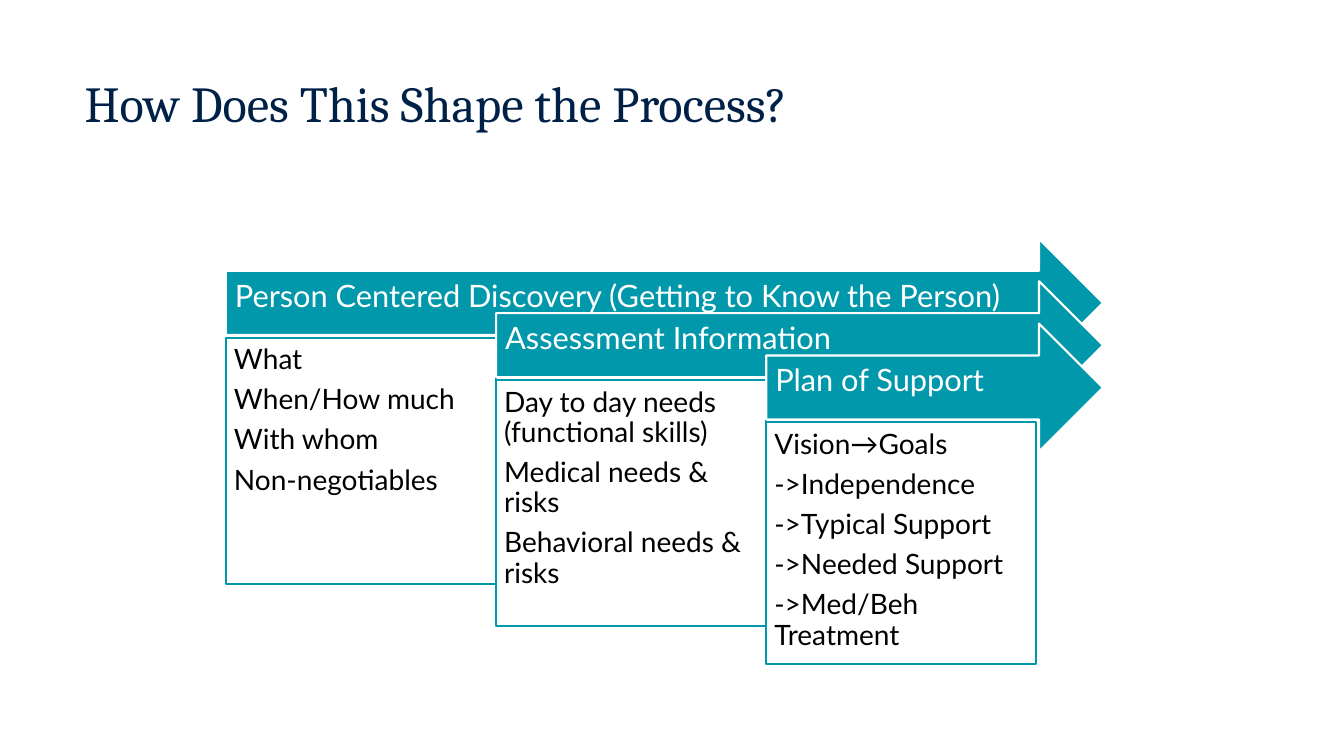
import pptx
import pptx.util
import pptx.dml.color
import pptx.enum.shapes
import pptx.enum.text

Inches = pptx.util.Inches
Pt = pptx.util.Pt
RGBColor = pptx.dml.color.RGBColor
SHAPE = pptx.enum.shapes.MSO_SHAPE
ANCHOR = pptx.enum.text.MSO_ANCHOR
ALIGN = pptx.enum.text.PP_ALIGN

NAVY = RGBColor(0x00, 0x21, 0x47)
TEAL = RGBColor(0x00, 0x98, 0xAA)
WHITE = RGBColor(0xFF, 0xFF, 0xFF)
BLACK = RGBColor(0x00, 0x00, 0x00)

LEFT, TOP = 2.24, 2.37
STEP_X, STEP_Y = 2.68, 0.42
ARROW_TIP, ARROW_HEIGHT = 10.94, 1.27
PANEL_DROP = 0.98

STAGES = [
    ("Person Centered Discovery (Getting to Know the Person)", 2.44,
     ["What", "When/How much", "With whom", "Non-negotiables"]),
    ("Assessment Information", 2.44,
     ["Day to day needs (functional skills)", "Medical needs & risks",
      "Behavioral needs & risks"]),
    ("Plan of Support", 2.4,
     ["Vision→Goals", "->Independence", "->Typical Support",
      "->Needed Support", "->Med/Beh Treatment"]),
]

ARROW_STYLE = {"fill": TEAL, "line": WHITE, "text": WHITE, "size": 22,
               "anchor": ANCHOR.MIDDLE, "insets": (0.09, 0.09, 0.28, 0.2)}
PANEL_STYLE = {"fill": WHITE, "line": TEAL, "text": BLACK, "size": 20,
               "anchor": ANCHOR.TOP, "insets": (0.08, 0.08, 0.08, 0.08)}


def set_frame(frame, anchor, insets):
    """Wrap the text and set its anchor and its left, top, right, bottom insets."""
    frame.word_wrap = True
    frame.vertical_anchor = anchor
    for side, inset in zip(("left", "top", "right", "bottom"), insets):
        setattr(frame, f"margin_{side}", Inches(inset))


def add_block(kind, box, lines, style):
    block = slide.shapes.add_shape(kind, *map(Inches, box))
    block.shadow.inherit = False
    block.fill.solid()
    block.fill.fore_color.rgb = style["fill"]
    block.line.color.rgb = style["line"]
    block.line.width = Pt(1.5)
    set_frame(block.text_frame, style["anchor"], style["insets"])
    block.text_frame.text = "\n".join(lines)
    paragraph_format = {"alignment": ALIGN.LEFT, "line_spacing": 0.9,
                        "space_after": Pt(0.35 * style["size"])}
    font_format = {"name": "Lato", "size": Pt(style["size"])}
    for paragraph in block.text_frame.paragraphs:
        for name, value in paragraph_format.items():
            setattr(paragraph, name, value)
        for name, value in font_format.items():
            setattr(paragraph.font, name, value)
        paragraph.font.color.rgb = style["text"]


deck = pptx.Presentation()
deck.slide_width = Inches(13.33)
deck.slide_height = Inches(7.5)
slide = deck.slides.add_slide(deck.slide_layouts[5])

title = slide.shapes.title
title_place = {"left": 0.74, "top": 0.67, "width": 11.69, "height": 1.05}
for name, value in title_place.items():
    setattr(title, name, Inches(value))
set_frame(title.text_frame, ANCHOR.TOP, (0.1, 0.05, 0.1, 0.05))
title.text_frame.text = "How Does This Shape the Process?"
heading = title.text_frame.paragraphs[0]
heading.alignment = ALIGN.LEFT
for name, value in {"name": "Cambria", "size": Pt(36)}.items():
    setattr(heading.font, name, value)
heading.font.color.rgb = NAVY

for index, (stage, panel_height, details) in enumerate(STAGES):
    left = LEFT + index * STEP_X
    top = TOP + index * STEP_Y
    add_block(SHAPE.RIGHT_ARROW, (left, top, ARROW_TIP - left, ARROW_HEIGHT),
              [stage], ARROW_STYLE)
    add_block(SHAPE.RECTANGLE, (left, top + PANEL_DROP, STEP_X, panel_height),
              details, PANEL_STYLE)

deck.save("out.pptx")
